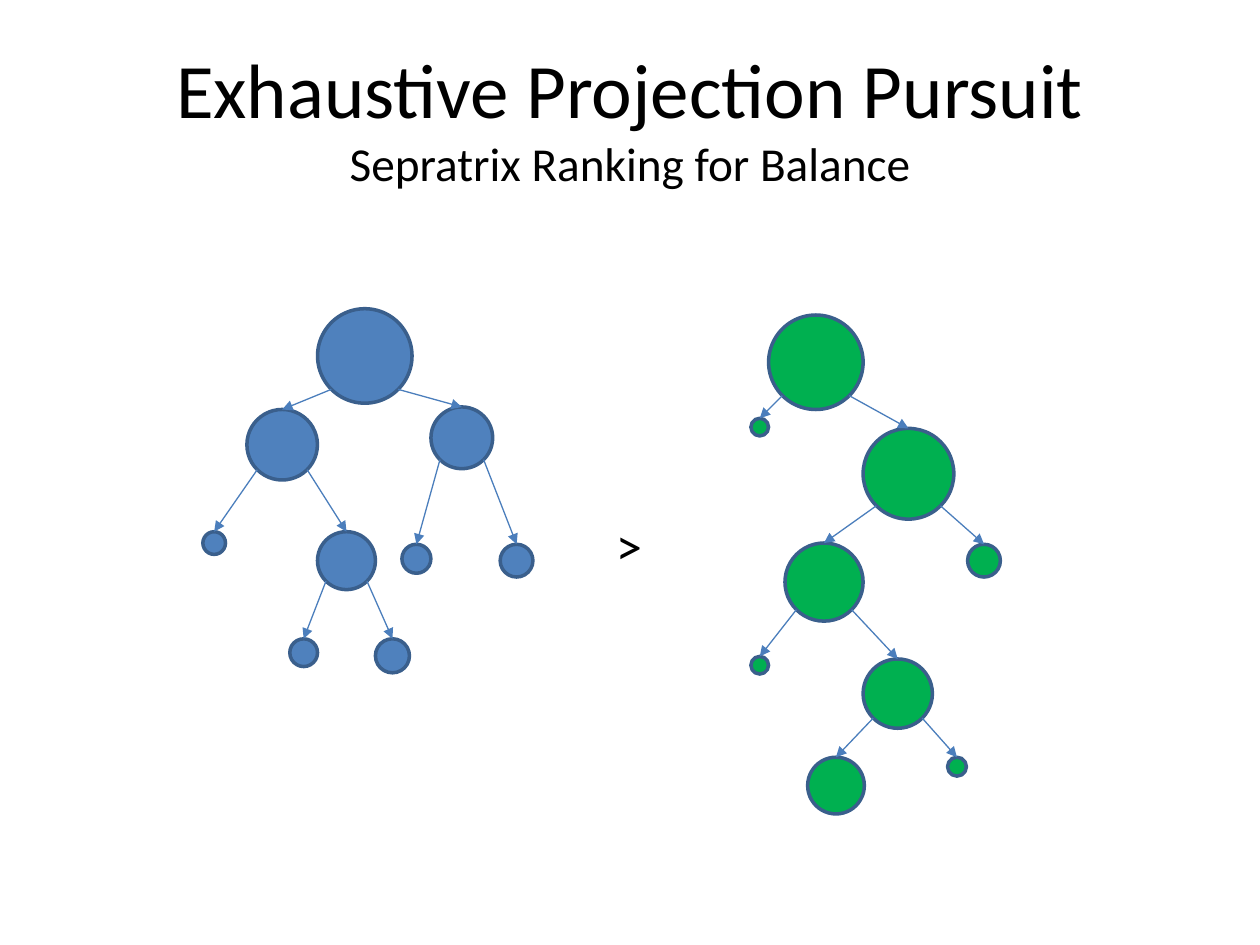
from dataclasses import dataclass
from math import sqrt

from lxml.etree import SubElement
from pptx import Presentation
from pptx.dml.color import RGBColor
from pptx.enum.shapes import MSO_CONNECTOR, MSO_SHAPE
from pptx.enum.text import MSO_ANCHOR, MSO_AUTO_SIZE, PP_ALIGN
from pptx.oxml.ns import qn
from pptx.slide import Slide
from pptx.util import Inches, Pt


@dataclass(frozen=True)
class Theme:
    font: str = "Calibri"
    ink: RGBColor = RGBColor(0, 0, 0)
    blue: RGBColor = RGBColor(0x4F, 0x81, 0xBD)
    green: RGBColor = RGBColor(0x00, 0xB0, 0x50)
    rim: RGBColor = RGBColor(0x3A, 0x5F, 0x8C)
    edge: RGBColor = RGBColor(0x4B, 0x7E, 0xBC)
    head: Pt = Pt(44)
    sub: Pt = Pt(27)
    sign: Pt = Pt(30)
    thick: Pt = Pt(2)
    thin: Pt = Pt(0.75)


@dataclass(frozen=True)
class Node:
    left: float
    top: float
    size: float
    kids: tuple["Node", ...] = ()


THEME = Theme()

EVEN = Node(2.52, 2.45, 0.75, (
    Node(1.96, 3.25, 0.56, (
        Node(1.61, 4.22, 0.18),
        Node(2.52, 4.22, 0.46, (
            Node(2.3, 5.07, 0.22),
            Node(2.98, 5.07, 0.27))))),
    Node(3.42, 3.23, 0.49, (
        Node(3.19, 4.32, 0.23),
        Node(3.97, 4.32, 0.26)))))

SKEWED = Node(6.1, 2.5, 0.75, (
    Node(5.96, 3.32, 0.14),
    Node(6.85, 3.4, 0.72, (
        Node(6.23, 4.31, 0.62, (
            Node(5.96, 5.21, 0.14),
            Node(6.85, 5.23, 0.55, (
                Node(6.41, 6.01, 0.45),
                Node(7.52, 6.01, 0.15))))),
        Node(7.68, 4.32, 0.26)))))


def draw_edge(slide: Slide, node: Node, kid: Node, side: int) -> None:
    half = node.size / 2
    reach = half / sqrt(2)
    line = slide.shapes.add_connector(
        MSO_CONNECTOR.STRAIGHT,
        Inches(node.left + half + side * reach),
        Inches(node.top + half + reach),
        Inches(kid.left + kid.size / 2),
        Inches(kid.top))
    line.line.color.rgb = THEME.edge
    line.line.width = THEME.thin
    props = line._element.spPr
    SubElement(props.find(qn("a:ln")), qn("a:tailEnd"), type="triangle")
    SubElement(props, qn("a:effectLst"))


def draw_tree(slide: Slide, node: Node, fill: RGBColor) -> None:
    disc = slide.shapes.add_shape(
        MSO_SHAPE.OVAL, Inches(node.left), Inches(node.top),
        Inches(node.size), Inches(node.size))
    disc.shadow.inherit = False
    disc.fill.solid()
    disc.fill.fore_color.rgb = fill
    disc.line.color.rgb = THEME.rim
    disc.line.width = THEME.thick
    for side, kid in zip((-1, 1), node.kids):
        draw_tree(slide, kid, fill)
        draw_edge(slide, node, kid, side)


def draw_title(slide: Slide) -> None:
    title = slide.shapes.title
    title.left, title.top = Inches(0.5), Inches(0.3)
    title.width, title.height = Inches(9), Inches(1.25)
    frame = title.text_frame
    frame.auto_size = MSO_AUTO_SIZE.NONE
    frame.vertical_anchor = MSO_ANCHOR.MIDDLE
    para = frame.paragraphs[0]
    para.alignment = PP_ALIGN.CENTER
    para.font.name = THEME.font
    para.font.color.rgb = THEME.ink
    run = para.add_run()
    run.text = "Exhaustive Projection Pursuit"
    run.font.size = THEME.head
    para.add_line_break()
    run = para.add_run()
    run.text = "Sepratrix Ranking for Balance"
    run.font.size = THEME.sub


def draw_sign(slide: Slide) -> None:
    box = slide.shapes.add_textbox(
        Inches(4.79), Inches(4.02), Inches(0.41), Inches(0.61))
    frame = box.text_frame
    frame.word_wrap = False
    frame.auto_size = MSO_AUTO_SIZE.SHAPE_TO_FIT_TEXT
    para = frame.paragraphs[0]
    para.text = ">"
    para.font.name = THEME.font
    para.font.size = THEME.sign
    para.font.color.rgb = THEME.ink


def main() -> None:
    deck = Presentation()
    deck.slide_width, deck.slide_height = Inches(10), Inches(7.5)
    slide = deck.slides.add_slide(deck.slide_layouts[5])
    draw_title(slide)
    draw_tree(slide, EVEN, THEME.blue)
    draw_tree(slide, SKEWED, THEME.green)
    draw_sign(slide)
    deck.save("out.pptx")


if __name__ == "__main__":
    main()
